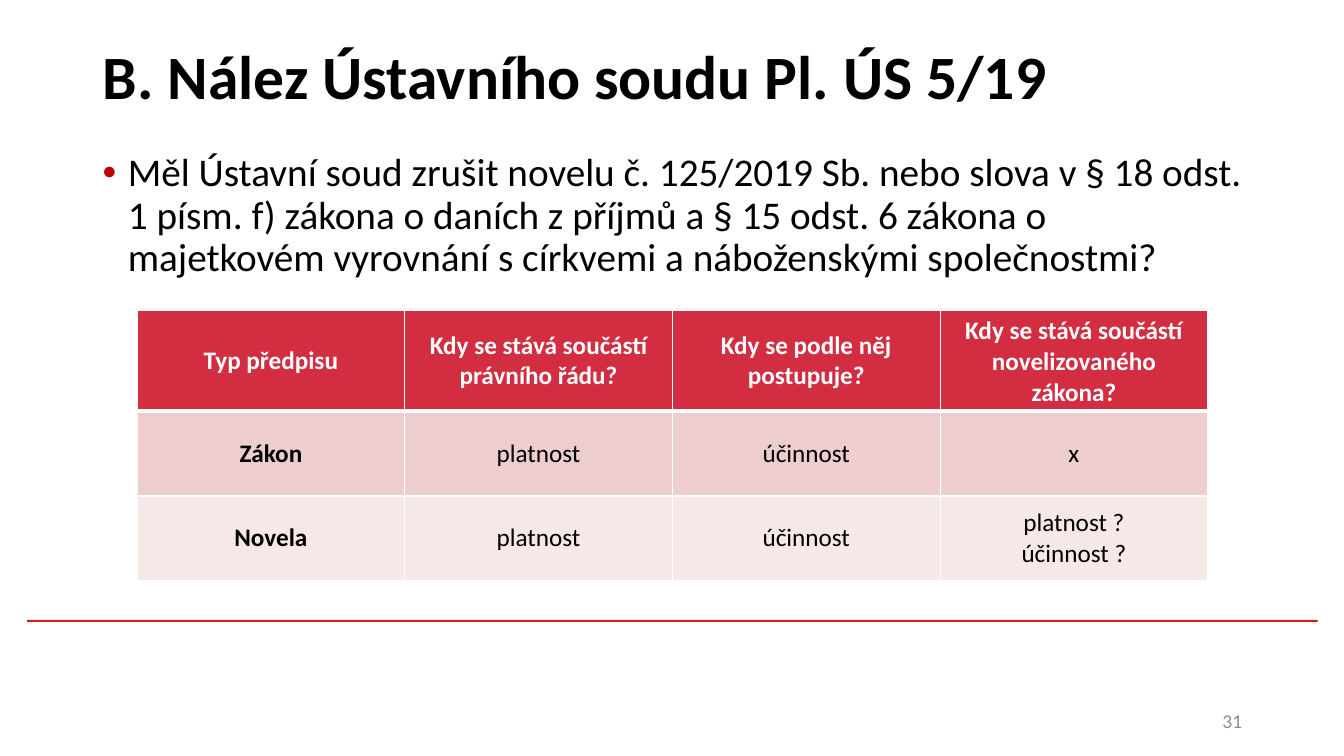
from dataclasses import dataclass

from lxml import etree
from pptx import Presentation
from pptx import util as u
from pptx.dml.color import RGBColor
from pptx.enum import shapes, text
from pptx.oxml.ns import qn

SLIDE_WIDTH, SLIDE_HEIGHT = 13.33, 7.5
TITLE_ONLY = 5


@dataclass(frozen=True)
class Theme:
    font: str = "Calibri"
    ink: str = "000000"
    paper: str = "FFFFFF"
    bullet: str = "C00000"
    rule: str = "CD1F21"
    muted: str = "8C8C8C"
    header: str = "D22D40"
    bands: tuple = ("EECDCF", "F7E8E8")
    title_size: int = 44
    body_size: int = 28
    table_size: int = 18
    number_size: int = 14


THEME = Theme()

TITLE = "B. Nález Ústavního soudu Pl. ÚS 5/19"
QUESTION = (
    "Měl Ústavní soud zrušit novelu č. 125/2019 Sb. nebo slova v § 18 odst. 1 písm. f) "
    "zákona o daních z příjmů a § 15 odst. 6 zákona o majetkovém vyrovnání s církvemi "
    "a náboženskými společnostmi?"
)
REGULATIONS = [
    ["Typ předpisu", "Kdy se stává součástí právního řádu?",
     "Kdy se podle něj postupuje?", "Kdy se stává součástí novelizovaného zákona?"],
    ["Zákon", "platnost", "účinnost", "x"],
    ["Novela", "platnost", "účinnost", "platnost ?\núčinnost ?"],
]


def inches(box):
    return [u.Inches(length) for length in box]


def style(paragraph, size, color, bold=False, align=text.PP_ALIGN.LEFT):
    paragraph.alignment = align
    font = paragraph.font
    font.name, font.size, font.bold = THEME.font, u.Pt(size), bold
    font.color.rgb = RGBColor.from_string(color)


def add_text(slide, box, words, anchor):
    frame = slide.shapes.add_textbox(*inches(box)).text_frame
    frame.word_wrap = True
    frame.vertical_anchor = anchor
    frame.text = words
    return frame.paragraphs[0]


# Title placeholder
def place_title(slide, box):
    title = slide.shapes.title
    title.left, title.top, title.width, title.height = inches(box)
    frame = title.text_frame
    frame.text = TITLE
    frame.auto_size = text.MSO_AUTO_SIZE.NONE
    frame.vertical_anchor = text.MSO_ANCHOR.MIDDLE
    style(frame.paragraphs[0], THEME.title_size, THEME.ink, bold=True)


# Bulleted question
def add_question(slide, box):
    paragraph = add_text(slide, box, QUESTION, text.MSO_ANCHOR.TOP)
    properties = paragraph._p.get_or_add_pPr()
    indent = u.Inches(0.25)
    properties.set("marL", str(indent))
    properties.set("indent", str(-indent))
    bullet_color = etree.SubElement(properties, qn("a:buClr"))
    etree.SubElement(bullet_color, qn("a:srgbClr"), val=THEME.bullet)
    etree.SubElement(properties, qn("a:buFont"), typeface="Arial")
    etree.SubElement(properties, qn("a:buChar"), char="•")
    paragraph.line_spacing = 0.9
    style(paragraph, THEME.body_size, THEME.ink)


def set_borders(cell, top, bottom):
    properties = cell._tc.get_or_add_tcPr()
    for side, width in (("L", 1), ("R", 1), ("T", top), ("B", bottom)):
        line = etree.SubElement(properties, qn(f"a:ln{side}"), w=str(u.Pt(width)))
        fill = etree.SubElement(line, qn("a:solidFill"))
        etree.SubElement(fill, qn("a:srgbClr"), val=THEME.paper)


# Table of regulations
def add_regulations(slide, box):
    rows, columns = len(REGULATIONS), len(REGULATIONS[0])
    table = slide.shapes.add_table(rows, columns, *inches(box)).table
    for row, values in enumerate(REGULATIONS):
        is_header = row == 0
        background = THEME.header if is_header else THEME.bands[row - 1]
        color = THEME.paper if is_header else THEME.ink
        for column, value in enumerate(values):
            cell = table.cell(row, column)
            cell.text = value
            cell.vertical_anchor = text.MSO_ANCHOR.MIDDLE
            set_borders(cell, top=3 if row == 1 else 1, bottom=3 if is_header else 1)
            cell.fill.solid()
            cell.fill.fore_color.rgb = RGBColor.from_string(background)
            for paragraph in cell.text_frame.paragraphs:
                style(paragraph, THEME.table_size, color,
                      bold=is_header or column == 0, align=text.PP_ALIGN.CENTER)


# Red rule and slide number
def add_footer(slide, box):
    left, top, width, height = box
    rule = slide.shapes.add_shape(shapes.MSO_SHAPE.RECTANGLE, *inches((left, top, width, 0.02)))
    rule.shadow.inherit = False
    rule.fill.solid()
    rule.fill.fore_color.rgb = RGBColor.from_string(THEME.rule)
    rule.line.fill.background()
    number_box = (left + 9.15, top + height - 0.4, 3, 0.4)
    number = add_text(slide, number_box, "31", text.MSO_ANCHOR.MIDDLE)
    style(number, THEME.number_size, THEME.muted, align=text.PP_ALIGN.RIGHT)


def main():
    presentation = Presentation()
    presentation.slide_width = u.Inches(SLIDE_WIDTH)
    presentation.slide_height = u.Inches(SLIDE_HEIGHT)
    slide = presentation.slides.add_slide(presentation.slide_layouts[TITLE_ONLY])

    margin = 0.92
    content_width = SLIDE_WIDTH - 2 * margin
    add_footer(slide, (0.27, 6.15, 12.8, 1.2))
    place_title(slide, (margin, 0.02, content_width, 1.45))
    add_question(slide, (margin, 1.47, content_width, 1.5))
    add_regulations(slide, (1.36, 3.08, 10.62, 3 * 0.84))
    presentation.save("out.pptx")


if __name__ == "__main__":
    main()
